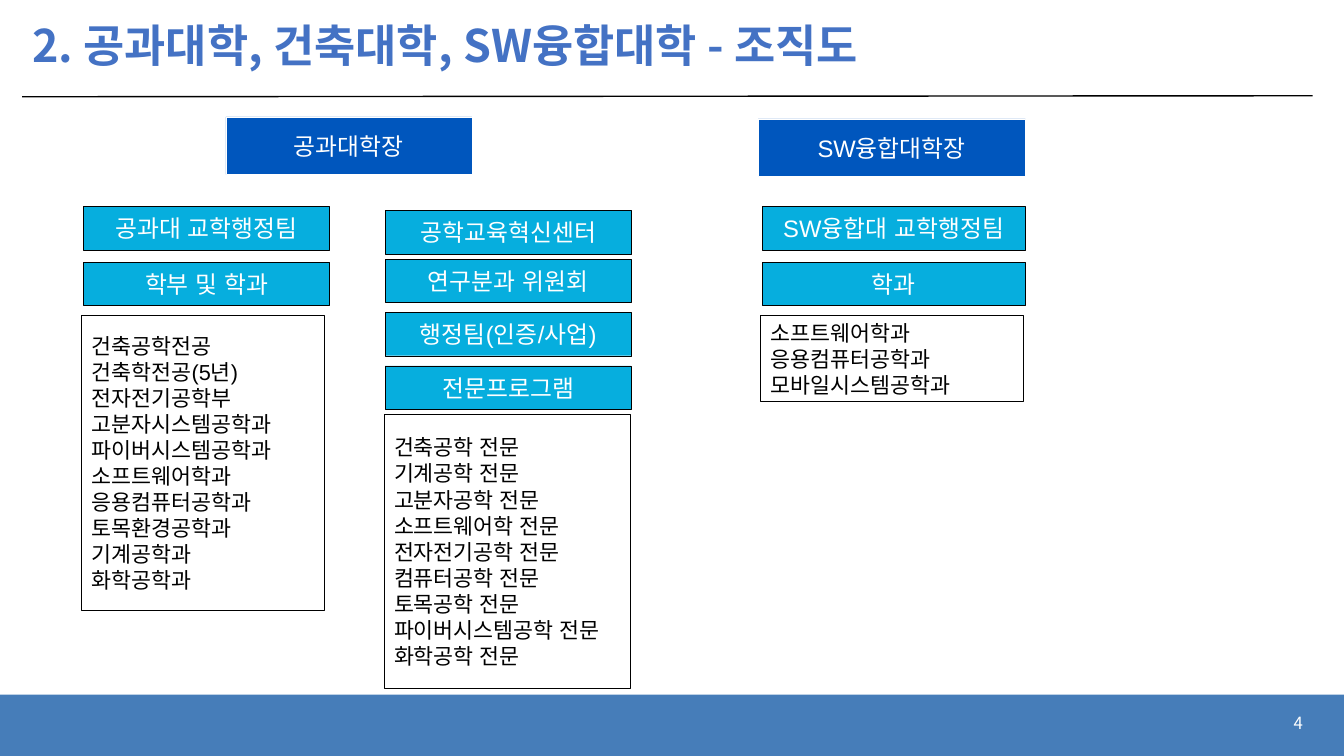
from pptx import Presentation
from pptx.dml.color import RGBColor
from pptx.enum.shapes import MSO_CONNECTOR, MSO_SHAPE
from pptx.enum.text import MSO_ANCHOR, PP_ALIGN
from pptx.oxml.ns import qn
from pptx.util import Inches, Pt
from lxml import etree

# Content
TITLE = "2. 공과대학, 건축대학, SW융합대학 - 조직도"
PAGE_NUMBER = "4"

# Each box: style, (left, top, width, height), lines of text
DEAN_BOXES = [
    ("dean", (2.24, 1.16, 2.44, 0.57), ["공과대학장"]),
    ("dean", (7.52, 1.18, 2.65, 0.57), ["SW융합대학장"]),
]

# Each column: left, width, units as (top, name)
UNIT_HEIGHT = 0.43
UNIT_COLUMNS = [
    (0.83, 2.44, [(2.05, "공과대 교학행정팀"), (2.6, "학부 및 학과")]),
    (3.82, 2.44, [(2.09, "공학교육혁신센터"), (2.57, "연구분과 위원회"),
                  (3.1, "행정팀(인증/사업)"), (3.63, "전문프로그램")]),
    (7.56, 2.61, [(2.05, "SW융합대 교학행정팀"), (2.6, "학과")]),
]

LIST_BOXES = [
    ("list", (0.81, 3.13, 2.41, 2.93), [
        "건축공학전공", "건축학전공(5년)", "전자전기공학부", "고분자시스템공학과",
        "파이버시스템공학과", "소프트웨어학과", "응용컴퓨터공학과", "토목환경공학과",
        "기계공학과", "화학공학과"]),
    ("list", (3.81, 4.11, 2.44, 2.72), [
        f"{field} 전문" for field in (
            "건축공학", "기계공학", "고분자공학", "소프트웨어학", "전자전기공학",
            "컴퓨터공학", "토목공학", "파이버시스템공학", "화학공학")]),
    ("list", (7.54, 3.13, 2.61, 0.85),
     ["소프트웨어학과", "응용컴퓨터공학과", "모바일시스템공학과"]),
]

# Theme: colours, fonts and type sizes
BODY_FONT, HEAD_FONT = "Arial", "Noto Sans CJK KR"
THEME = {
    "footer": {"fill": "467DB9"},
    "rule": {"line": "000000", "weight": 1},
    "title": {"font": HEAD_FONT, "size": 32, "color": "4472C4", "bold": True,
              "align": {"alignment": PP_ALIGN.LEFT, "line_spacing": 0.9}},
    "number": {"font": HEAD_FONT, "size": 12, "color": "FFFFFF",
               "align": {"alignment": PP_ALIGN.RIGHT}},
    "dean": {"fill": "0056BD", "line": "FFFFFF", "weight": 0.25,
             "font": BODY_FONT, "size": 17, "color": "FFFFFF",
             "align": {"alignment": PP_ALIGN.CENTER}},
    "unit": {"fill": "06AEDE", "line": "000000", "weight": 0.25,
             "font": BODY_FONT, "size": 17, "color": "FFFFFF",
             "align": {"alignment": PP_ALIGN.CENTER}},
    "list": {"fill": "FFFFFF", "line": "000000", "weight": 0.75,
             "font": BODY_FONT, "size": 15.5, "color": "000000",
             "align": {"alignment": PP_ALIGN.LEFT}},
}


def set_attributes(target, values):
    for name, value in values.items():
        setattr(target, name, value)


def write_text(shape, lines, style):
    frame = shape.text_frame
    set_attributes(frame, {"word_wrap": True, "vertical_anchor": MSO_ANCHOR.MIDDLE})
    for index, line in enumerate(lines):
        paragraph = frame.add_paragraph() if index else frame.paragraphs[0]
        set_attributes(paragraph, style["align"])
        run = paragraph.add_run()
        run.text = line
        set_attributes(run.font, {"name": style["font"], "size": Pt(style["size"]),
                                  "bold": style.get("bold", False)})
        run.font.color.rgb = RGBColor.from_string(style["color"])
        east_asian = etree.SubElement(run.font._element, qn("a:ea"))
        east_asian.set("typeface", style["font"])


def add_box(slide, style_name, place, lines=()):
    style = THEME[style_name]
    shape = slide.shapes.add_shape(MSO_SHAPE.RECTANGLE, *map(Inches, place))
    shape.shadow.inherit = False
    shape.fill.solid()
    shape.fill.fore_color.rgb = RGBColor.from_string(style["fill"])
    if "line" in style:
        shape.line.color.rgb = RGBColor.from_string(style["line"])
        shape.line.width = Pt(style["weight"])
    else:
        shape.line.fill.background()
    if lines:
        write_text(shape, lines, style)


def add_label(slide, style_name, place, text):
    label = slide.shapes.add_textbox(*map(Inches, place))
    write_text(label, [text], THEME[style_name])


def add_rule(slide, start, end):
    style = THEME["rule"]
    rule = slide.shapes.add_connector(MSO_CONNECTOR.STRAIGHT, *map(Inches, start + end))
    rule.line.color.rgb = RGBColor.from_string(style["line"])
    rule.line.width = Pt(style["weight"])
    etree.SubElement(rule._element.spPr, qn("a:effectLst"))


def main():
    presentation = Presentation()
    set_attributes(presentation, {"slide_width": Inches(13.33),
                                  "slide_height": Inches(7.5)})
    slide = presentation.slides.add_slide(presentation.slide_layouts[6])

    # Frame: footer band, title with rule, page number
    add_box(slide, "footer", (0, 6.89, 13.33, 0.61))
    add_rule(slide, (0.22, 0.96), (13.02, 0.95))
    add_label(slide, "title", (0.22, 0.1, 12.81, 0.75), TITLE)
    add_label(slide, "number", (10.02, 6.97, 3, 0.4), PAGE_NUMBER)

    # Organisation chart
    unit_boxes = [("unit", (left, top, width, UNIT_HEIGHT), [name])
                  for left, width, units in UNIT_COLUMNS for top, name in units]
    for style_name, place, lines in DEAN_BOXES + unit_boxes + LIST_BOXES:
        add_box(slide, style_name, place, lines)

    presentation.save("out.pptx")


if __name__ == "__main__":
    main()
